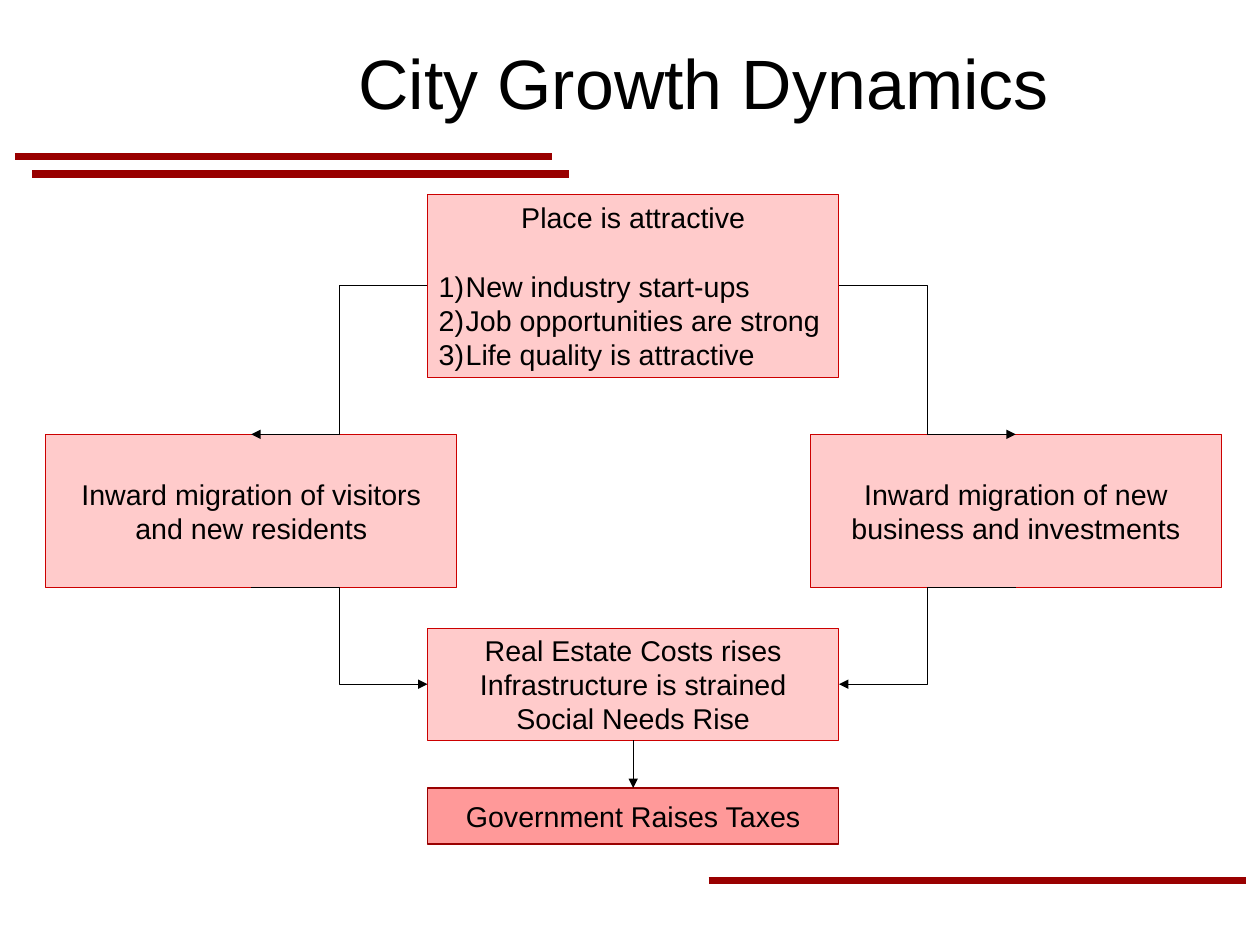
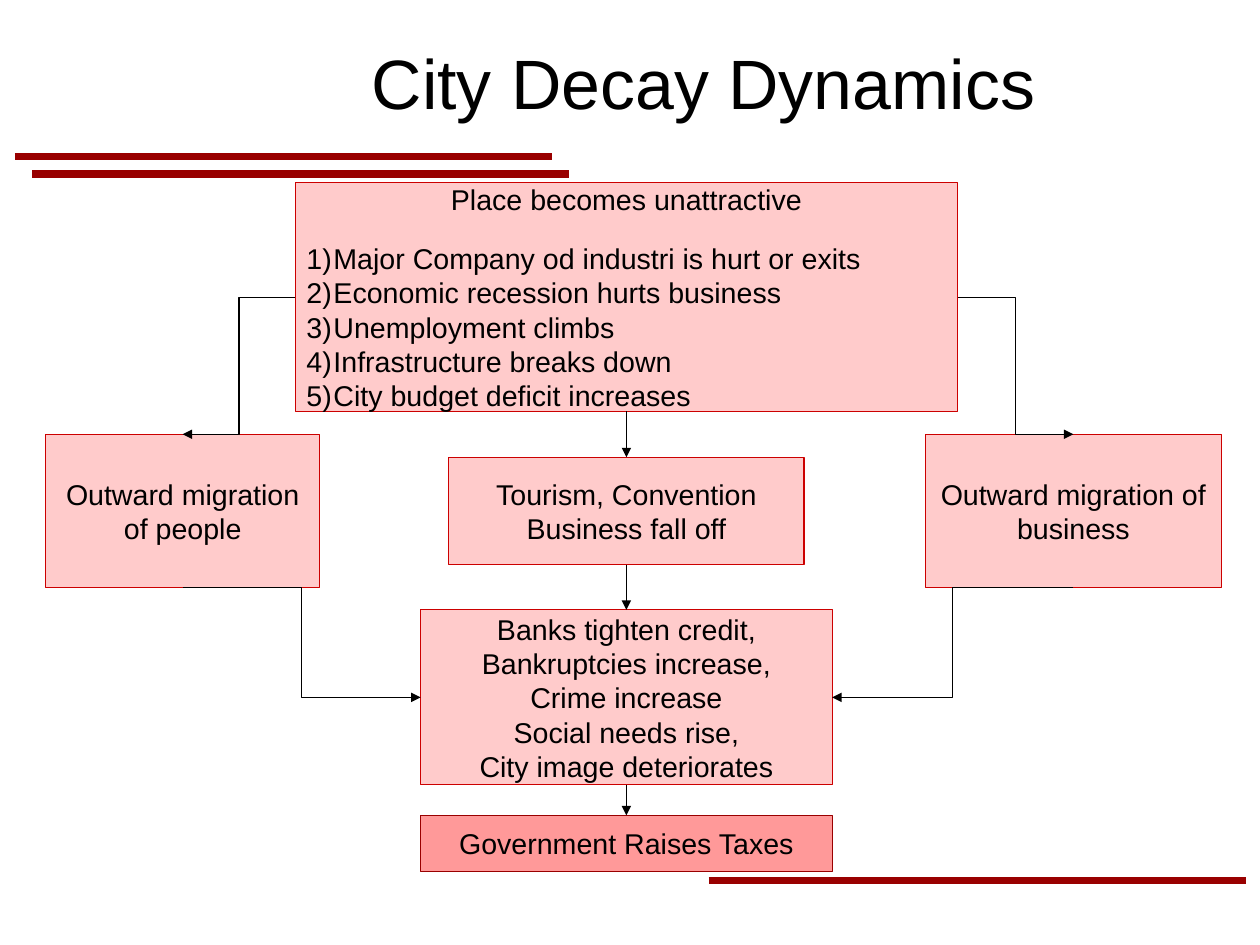
from dataclasses import dataclass

from pptx import Presentation
from pptx.dml.color import RGBColor
from pptx.enum.shapes import MSO_CONNECTOR, MSO_SHAPE
from pptx.enum.text import MSO_ANCHOR, MSO_AUTO_SIZE, PP_ALIGN
from pptx.oxml.ns import qn
from pptx.util import Pt
from lxml.etree import SubElement

BLACK = RGBColor(0x00, 0x00, 0x00)
PINK = RGBColor(0xFF, 0x99, 0x99)
RED = RGBColor(0xCC, 0x00, 0x00)
DARK_RED = RGBColor(0x99, 0x00, 0x00)
FONT = "Arial"
TEXT_SIZE = 18
TITLE_SIZE = 44
NUMBER_INDENT = Pt(17)
SIDE_TOP, SIDE_HEIGHT = 158.4, 96.4


@dataclass
class Box:
    """A rectangle in points."""
    left: float
    top: float
    width: float
    height: float

    @property
    def right(self):
        return self.left + self.width

    @property
    def bottom(self):
        return self.top + self.height

    @property
    def center(self):
        return self.left + self.width / 2

    @property
    def middle(self):
        return self.top + self.height / 2


@dataclass
class Step:
    """One box of the central column; top is measured from the diagram."""
    text: str
    top: float
    width: float
    height: float
    items: tuple = ()
    item_gap: float = 0
    arrow_above: bool = False


DIAGRAM = Box(28.8, 115.2, 740.6, 420)
TITLE = Box(109.4, 23.8, 668, 55.4)


def style_runs(para, size):
    for span in para.runs:
        span.font.name = FONT
        span.font.size = Pt(size)
        span.font.color.rgb = BLACK


def add_line(page, kind, start, end, color, weight, arrow=False):
    line = page.shapes.add_connector(kind, *(Pt(value) for value in start + end))
    line.line.color.rgb = color
    line.line.width = Pt(weight)
    properties = line.element.spPr
    if arrow:
        SubElement(properties.find(qn("a:ln")), qn("a:tailEnd"), type="triangle")
    SubElement(properties, qn("a:effectLst"))
    return line


def add_arrow(page, start, end, kind=MSO_CONNECTOR.ELBOW):
    add_line(page, kind, start, end, BLACK, 0.75, arrow=True)


def number_paragraph(para):
    properties = para._p.get_or_add_pPr()
    properties.set("marL", str(NUMBER_INDENT))
    properties.set("indent", str(-NUMBER_INDENT))
    SubElement(properties, qn("a:buFont"), typeface=FONT)
    SubElement(properties, qn("a:buAutoNum"), type="arabicParenR")


def add_panel(page, box, text, items=(), item_gap=0, solid=False):
    panel = page.shapes.add_shape(MSO_SHAPE.RECTANGLE, Pt(box.left), Pt(box.top),
                                  Pt(box.width), Pt(box.height))
    panel.shadow.inherit = False
    panel.fill.solid()
    panel.fill.fore_color.rgb = PINK
    panel.line.color.rgb = DARK_RED if solid else RED
    panel.line.width = Pt(0.75)
    if not solid:
        color = panel.element.spPr.find(qn("a:solidFill"))[0]
        SubElement(color, qn("a:alpha"), val="50000")

    frame = panel.text_frame
    frame.word_wrap = True
    frame.vertical_anchor = MSO_ANCHOR.MIDDLE
    frame.text = "\n".join((text, *items))
    first_item = len(frame.paragraphs) - len(items)
    for index, para in enumerate(frame.paragraphs):
        if index >= first_item:
            number_paragraph(para)
            para.alignment = PP_ALIGN.LEFT
        else:
            para.alignment = PP_ALIGN.CENTER
        if items and index == first_item:
            para.space_before = Pt(item_gap)
        style_runs(para, TEXT_SIZE)


def set_up_layout(deck):
    """Give the layout its title place."""
    layout = deck.slide_layouts[5]
    title = layout.placeholders[0]
    title.left, title.top = Pt(TITLE.left), Pt(TITLE.top)
    title.width, title.height = Pt(TITLE.width), Pt(TITLE.height)
    frame = title.text_frame
    frame.margin_left = frame.margin_right = frame.margin_top = frame.margin_bottom = 0
    frame.vertical_anchor = MSO_ANCHOR.MIDDLE
    frame.auto_size = MSO_AUTO_SIZE.NONE
    return layout


def move_rules_to_layout(page, layout):
    """Draw the dark red rules once, for every slide of the layout."""
    for left, top in ((446.4, 554.4), (20.2, 109.6), (9.4, 98.4)):
        rule = add_line(page, MSO_CONNECTOR.STRAIGHT, (left, top),
                        (left + 338.4, top), DARK_RED, 4.5)
        layout.shapes.element.append(rule.element)


def add_title(page, text):
    frame = page.shapes.title.text_frame
    frame.text = text
    para = frame.paragraphs[0]
    para.alignment = PP_ALIGN.CENTER
    style_runs(para, TITLE_SIZE)


def add_diagram(page, area, center, steps, sides):
    """Central column of steps with a box on either side; the last step is solid."""
    column = [Box(center - step.width / 2, area.top + step.top, step.width, step.height)
              for step in steps]
    for step, box in zip(steps, column):
        add_panel(page, box, step.text, step.items, step.item_gap, step is steps[-1])
    for step, above, below in zip(steps[1:], column, column[1:]):
        if step.arrow_above:
            add_arrow(page, (center, above.bottom), (center, below.top),
                      MSO_CONNECTOR.STRAIGHT)

    # Side boxes, each fed by the first step and feeding the last but one
    cause, effect = column[0], column[-2]
    for on_left, (text, width) in zip((True, False), sides):
        left = area.left if on_left else area.right - width
        side = Box(left, area.top + SIDE_TOP, width, SIDE_HEIGHT)
        add_panel(page, side, text)
        cause_edge, effect_edge = ((cause.left, effect.left) if on_left
                                   else (cause.right, effect.right))
        add_arrow(page, (cause_edge, cause.middle), (side.center, side.top))
        add_arrow(page, (side.center, side.bottom), (effect_edge, effect.middle))


GROWTH_STEPS = (
    Step("Place is attractive", 7.2, 259.2, 115.2,
         ("New industry start-ups", "Job opportunities are strong",
          "Life quality is attractive"), 21.5),
    Step("Real Estate Costs rises\nInfrastructure is strained\nSocial Needs Rise",
         280.5, 259.2, 70.6),
    Step("Government Raises Taxes", 381.2, 259.2, 35.3, arrow_above=True),
)
GROWTH_SIDES = (("Inward migration of visitors and new residents", 259),
                ("Inward migration of new business and investments", 259))

DECAY_STEPS = (
    Step("Place becomes unattractive", 0, 417.2, 144,
         ("Major Company od industri is hurt or exits",
          "Economic recession hurts business", "Unemployment climbs",
          "Infrastructure breaks down", "City budget deficit increases"), 15.5),
    Step("Tourism, Convention Business fall off", 172.8, 223.7, 67.7, arrow_above=True),
    Step("Banks tighten credit,\nBankruptcies increase,\nCrime increase\n"
         "Social needs rise,\nCity image deteriorates",
         269, 259.2, 110.2, arrow_above=True),
    Step("Government Raises Taxes", 398.4, 259.2, 35.3, arrow_above=True),
)
DECAY_SIDES = (("Outward migration of people", 172.6),
               ("Outward migration of business", 186.5))


def main():
    deck = Presentation()
    deck.slide_width, deck.slide_height = Pt(793.7), Pt(595.28)
    layout = set_up_layout(deck)
    for title, center, steps, sides in (
            ("City Growth Dynamics", 398.9, GROWTH_STEPS, GROWTH_SIDES),
            ("City Decay Dynamics", 394.6, DECAY_STEPS, DECAY_SIDES)):
        page = deck.slides.add_slide(layout)
        add_title(page, title)
        add_diagram(page, DIAGRAM, center, steps, sides)
    move_rules_to_layout(page, layout)
    deck.save("out.pptx")


if __name__ == "__main__":
    main()
